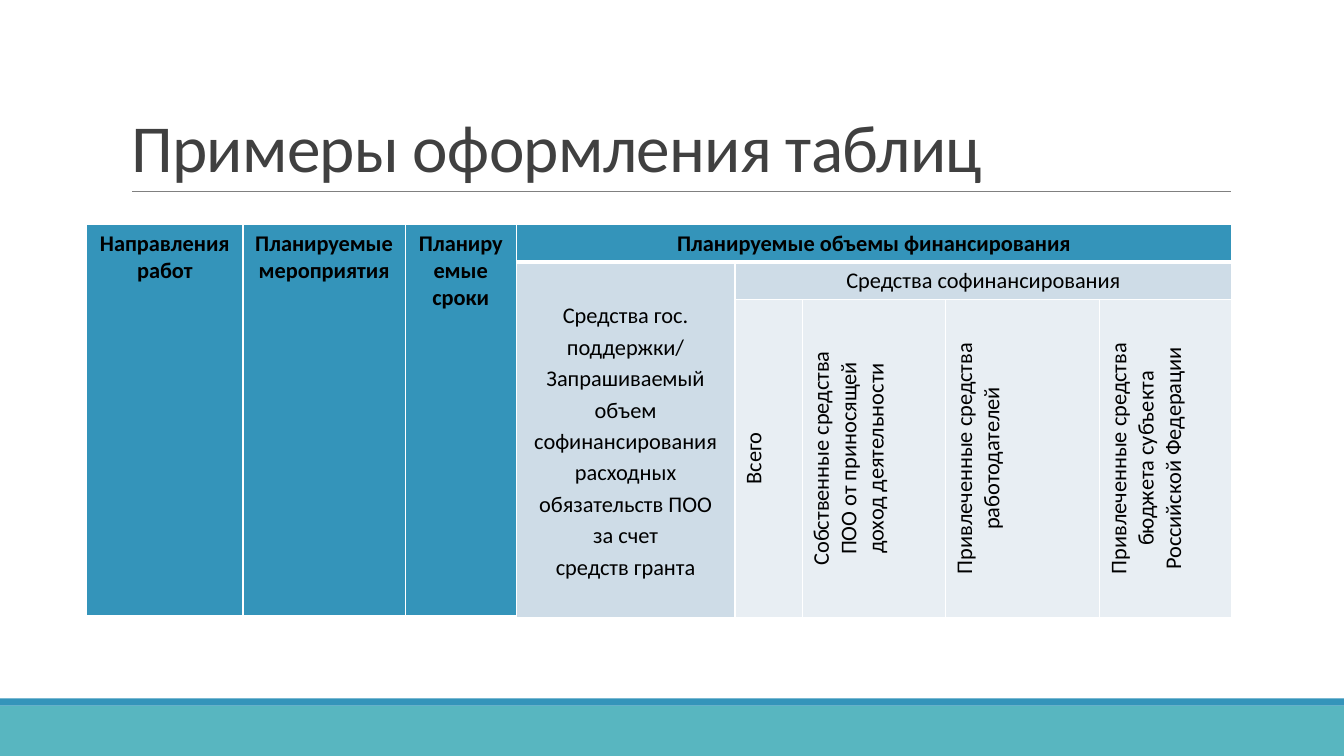
from dataclasses import dataclass

from lxml.etree import SubElement as SubEl
from pptx import Presentation
from pptx.dml.color import RGBColor
from pptx.enum.shapes import MSO_CONNECTOR as Connector, MSO_SHAPE as Shape
from pptx.enum.text import MSO_ANCHOR as Anchor, MSO_AUTO_SIZE as AutoSize, PP_ALIGN as Align
from pptx.oxml.ns import qn
from pptx.slide import Slide
from pptx.table import Table
from pptx.util import Inches, Pt

COLOURS = {
    "teal": "58B6C0", "blue": "3494BA", "pale": "CEDCE7", "palest": "E8EEF3",
    "rule": "808080", "title": "404040", "text": "000000", "border": "FFFFFF",
}
FONT = "Calibri"
COLUMN_WIDTHS = [1.55, 1.61, 1.1, 2.17, 0.67, 1.42, 1.53, 1.31]
ROW_HEIGHTS = [0.37, 0.37, 3.15]


@dataclass(frozen=True)
class Band:
    top: float
    height: float
    colour: str


@dataclass(frozen=True)
class Entry:
    row: int
    column: int
    lines: tuple[str, ...]
    fill: str
    rows: int = 1
    columns: int = 1
    header: bool = False
    middle: bool = False
    rotated: bool = False
    spacing: float = 1.0


BANDS = [Band(7, 0.5, "teal"), Band(6.93, 0.07, "blue")]

HEADINGS = ["Направления работ", "Планируемые мероприятия", "Планируемые сроки"]
SOURCES = [
    ("Всего",),
    ("Собственные средства", "ПОО от приносящей", "доход деятельности"),
    ("Привлеченные средства", "работодателей"),
    ("Привлеченные средства", "бюджета субъекта", "Российской Федерации"),
]
GRANT = (
    "Средства гос. поддержки/",
    "Запрашиваемый объем софинансирования расходных обязательств ПОО",
    "за счет",
    "средств гранта",
)
ENTRIES = [
    *(Entry(0, column, (heading,), "blue", rows=3, header=True)
      for column, heading in enumerate(HEADINGS)),
    Entry(0, 3, ("Планируемые объемы финансирования",), "blue", columns=5, header=True),
    Entry(1, 3, GRANT, "pale", rows=2, middle=True, spacing=1.15),
    Entry(1, 4, ("Средства софинансирования",), "pale", columns=4),
    *(Entry(2, column, lines, "palest", middle=True, rotated=True)
      for column, lines in enumerate(SOURCES, start=4)),
]


def colour(name: str) -> RGBColor:
    return RGBColor.from_string(COLOURS[name])


def draw_band(page: Slide, band: Band) -> None:
    box = page.shapes.add_shape(Shape.RECTANGLE, 0, Inches(band.top),
                                Inches(13.33), Inches(band.height))
    box.shadow.inherit = False
    box.fill.solid()
    box.fill.fore_color.rgb = colour(band.colour)
    box.line.fill.background()


def draw_rule(page: Slide) -> None:
    rule = page.shapes.add_connector(Connector.STRAIGHT, Inches(1.31), Inches(1.9),
                                     Inches(12.21), Inches(1.9))
    rule.line.color.rgb = colour("rule")
    rule.line.width = Pt(0.5)
    SubEl(rule._element.spPr, qn("a:effectLst"))


def write_title(page: Slide, text: str) -> None:
    title = page.shapes.title
    title.left, title.top = Inches(1.2), Inches(0.31)
    title.width, title.height = Inches(11), Inches(1.59)
    frame = title.text_frame
    frame.auto_size = AutoSize.NONE
    frame.vertical_anchor = Anchor.BOTTOM
    para = frame.paragraphs[0]
    para.alignment = Align.LEFT
    para.line_spacing = 0.85
    span = para.add_run()
    span.text = text
    span.font.name, span.font.size = FONT, Pt(48)
    span.font.color.rgb = colour("title")
    span.font._element.set("spc", "-50")


def fill_cell(table: Table, entry: Entry) -> None:
    cell = table.cell(entry.row, entry.column)
    if entry.rows > 1 or entry.columns > 1:
        cell.merge(table.cell(entry.row + entry.rows - 1, entry.column + entry.columns - 1))

    # Borders come before the fill in the cell properties
    properties = cell._tc.get_or_add_tcPr()
    for side in "LRTB":
        width = 3 if entry.header and side == "B" else 1
        line = SubEl(properties, qn(f"a:ln{side}"), w=str(Pt(width)))
        SubEl(SubEl(line, qn("a:solidFill")), qn("a:srgbClr"), val=COLOURS["border"])
    if entry.rotated:
        properties.set("vert", "vert270")
    cell.fill.solid()
    cell.fill.fore_color.rgb = colour(entry.fill)
    cell.vertical_anchor = Anchor.MIDDLE if entry.middle else Anchor.TOP

    frame = cell.text_frame
    for index, text in enumerate(entry.lines):
        para = frame.add_paragraph() if index else frame.paragraphs[0]
        para.alignment = Align.CENTER
        para.line_spacing = entry.spacing
        span = para.add_run()
        span.text = text
        span.font.name, span.font.size = FONT, Pt(16)
        span.font.bold = entry.header
        span.font.color.rgb = colour("text")


def draw_table(page: Slide) -> None:
    table = page.shapes.add_table(
        len(ROW_HEIGHTS), len(COLUMN_WIDTHS), Inches(0.86), Inches(2.23),
        Inches(sum(COLUMN_WIDTHS)), Inches(sum(ROW_HEIGHTS))).table
    for column, width in zip(table.columns, COLUMN_WIDTHS):
        column.width = Inches(width)
    for row, height in zip(table.rows, ROW_HEIGHTS):
        row.height = Inches(height)
    for entry in ENTRIES:
        fill_cell(table, entry)


def main() -> None:
    deck = Presentation()
    deck.slide_width, deck.slide_height = Inches(13.33), Inches(7.5)
    page = deck.slides.add_slide(deck.slide_layouts[5])

    # Footer bands and title rule
    for band in BANDS:
        draw_band(page, band)
    draw_rule(page)

    # Title and financing table
    write_title(page, "Примеры оформления таблиц")
    draw_table(page)
    deck.save("out.pptx")


if __name__ == "__main__":
    main()
